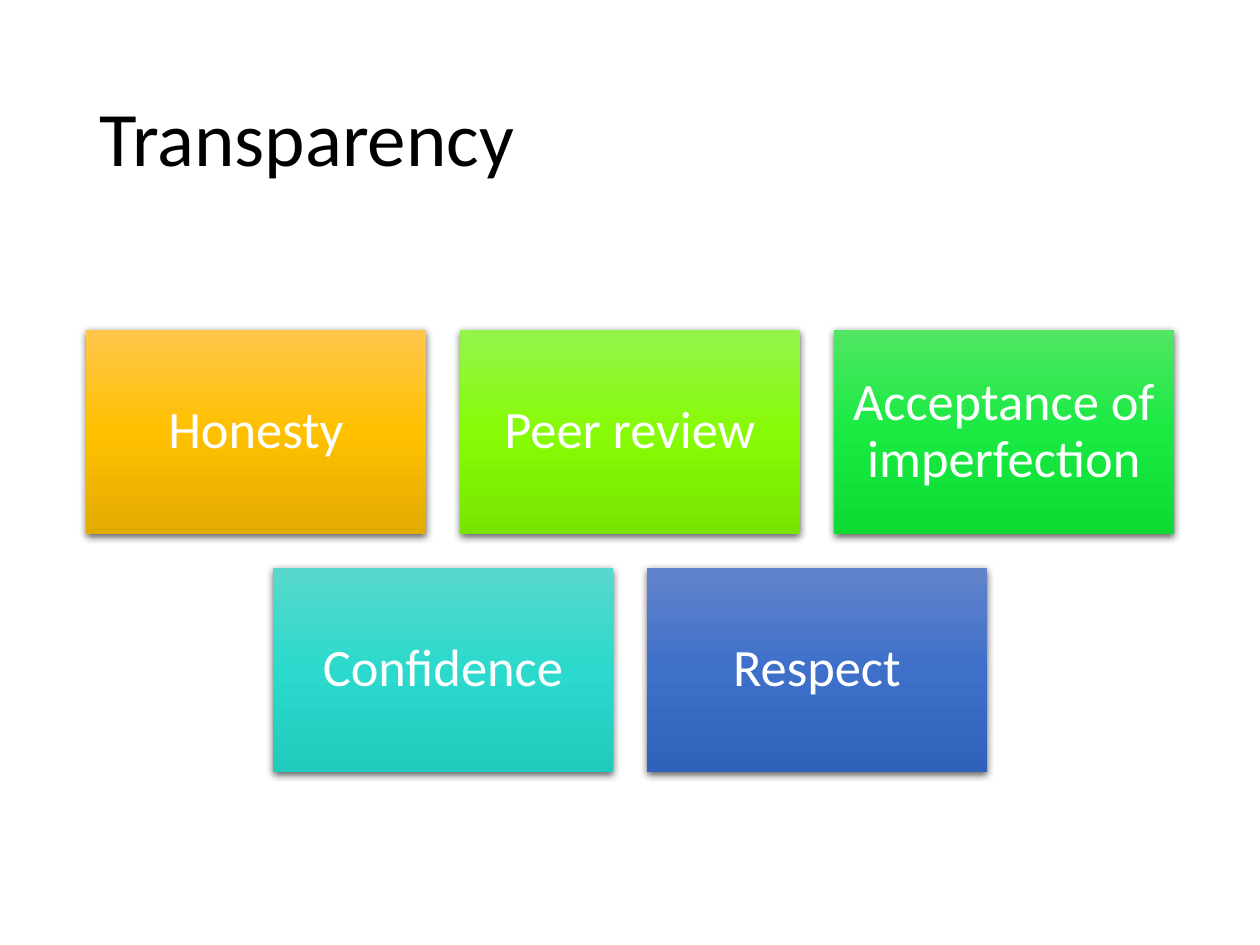
from copy import deepcopy
from dataclasses import dataclass

from pptx import Presentation
from pptx.dml.color import RGBColor
from pptx.enum.shapes import MSO_SHAPE
from pptx.enum.text import MSO_ANCHOR, PP_ALIGN
from pptx.oxml import parse_xml
from pptx.oxml.ns import nsdecls, qn
from pptx.shapes.autoshape import Shape
from pptx.slide import Slide
from pptx.util import Emu, Pt

SLIDE_WIDTH, SLIDE_HEIGHT = 1260, 945
EMU_PER_PX = 914400 / 126
CARD_WIDTH, CARD_HEIGHT, CARD_GAP = 340, 204, 34
CARDS_TOP = 330
CARD_INSET = 15
FONT = "Calibri"


@dataclass(frozen=True)
class Card:
    label: str
    gradient: tuple[str, str, str]


CARD_ROWS = [
    [
        Card("Honesty", ("FFC64B", "FFC000", "E3AB00")),
        Card("Peer review", ("94F44C", "87FB06", "78E500")),
        Card("Acceptance of imperfection", ("51E663", "19EA42", "0CDB34")),
    ],
    [
        Card("Confidence", ("58D8CC", "2BDACC", "1ECBBD")),
        Card("Respect", ("6183CB", "3E70CA", "3062BB")),
    ],
]


def px(length: int) -> Emu:
    return Emu(round(length * EMU_PER_PX))


def rgb(color: str) -> RGBColor:
    return RGBColor.from_string(color)


def set_text(shape: Shape, text: str, size: int, color: str, alignment: PP_ALIGN) -> None:
    text_frame = shape.text_frame
    text_frame.word_wrap = True
    text_frame.vertical_anchor = MSO_ANCHOR.MIDDLE
    text_frame.text = text
    paragraph = text_frame.paragraphs[0]
    paragraph.alignment = alignment
    paragraph.line_spacing = 0.9
    font = paragraph.runs[0].font
    font.name = FONT
    font.size = Pt(size)
    font.color.rgb = rgb(color)


def fill_gradient(shape: Shape, colors: tuple[str, str, str]) -> None:
    """Fill with three evenly spaced colours from top to bottom."""
    shape.fill.gradient()
    shape.fill.gradient_angle = 270
    stop_list = shape._element.spPr.find(qn("a:gradFill")).find(qn("a:gsLst"))
    stop_list.insert(1, deepcopy(stop_list[0]))
    for index, (stop, color) in enumerate(zip(shape.fill.gradient_stops, colors)):
        stop.position = index / 2
        stop.color.rgb = rgb(color)


def add_shadow(shape: Shape) -> None:
    shape.shadow.inherit = False
    shape._element.spPr.find(qn("a:effectLst")).append(parse_xml(
        f'<a:outerShdw {nsdecls("a")} blurRad="{Pt(4.5)}" dist="{Pt(1.5)}" '
        'dir="5400000" algn="ctr" rotWithShape="0">'
        '<a:srgbClr val="000000"><a:alpha val="63000"/></a:srgbClr></a:outerShdw>'
    ))


def add_title(slide: Slide, text: str) -> None:
    title = slide.shapes.add_textbox(px(87), px(50), px(1086), px(183))
    set_text(title, text, 44, "000000", PP_ALIGN.LEFT)


def add_card(slide: Slide, card: Card, left: int, top: int) -> None:
    shape = slide.shapes.add_shape(
        MSO_SHAPE.RECTANGLE, px(left), px(top), px(CARD_WIDTH), px(CARD_HEIGHT))
    fill_gradient(shape, card.gradient)
    shape.line.fill.background()
    add_shadow(shape)
    text_frame = shape.text_frame
    text_frame.margin_left = text_frame.margin_right = px(CARD_INSET)
    text_frame.margin_top = text_frame.margin_bottom = px(CARD_INSET)
    set_text(shape, card.label, 30, "FFFFFF", PP_ALIGN.CENTER)


def add_card_rows(slide: Slide, rows: list[list[Card]]) -> None:
    """Draw each row of cards centred on the slide."""
    for row_index, row in enumerate(rows):
        row_width = len(row) * (CARD_WIDTH + CARD_GAP) - CARD_GAP
        row_left = (SLIDE_WIDTH - row_width) // 2
        top = CARDS_TOP + row_index * (CARD_HEIGHT + CARD_GAP)
        for column, card in enumerate(row):
            add_card(slide, card, row_left + column * (CARD_WIDTH + CARD_GAP), top)


def main() -> None:
    presentation = Presentation()
    presentation.slide_width = px(SLIDE_WIDTH)
    presentation.slide_height = px(SLIDE_HEIGHT)
    slide = presentation.slides.add_slide(presentation.slide_layouts[6])
    add_title(slide, "Transparency")
    add_card_rows(slide, CARD_ROWS)
    presentation.save("out.pptx")


if __name__ == "__main__":
    main()
